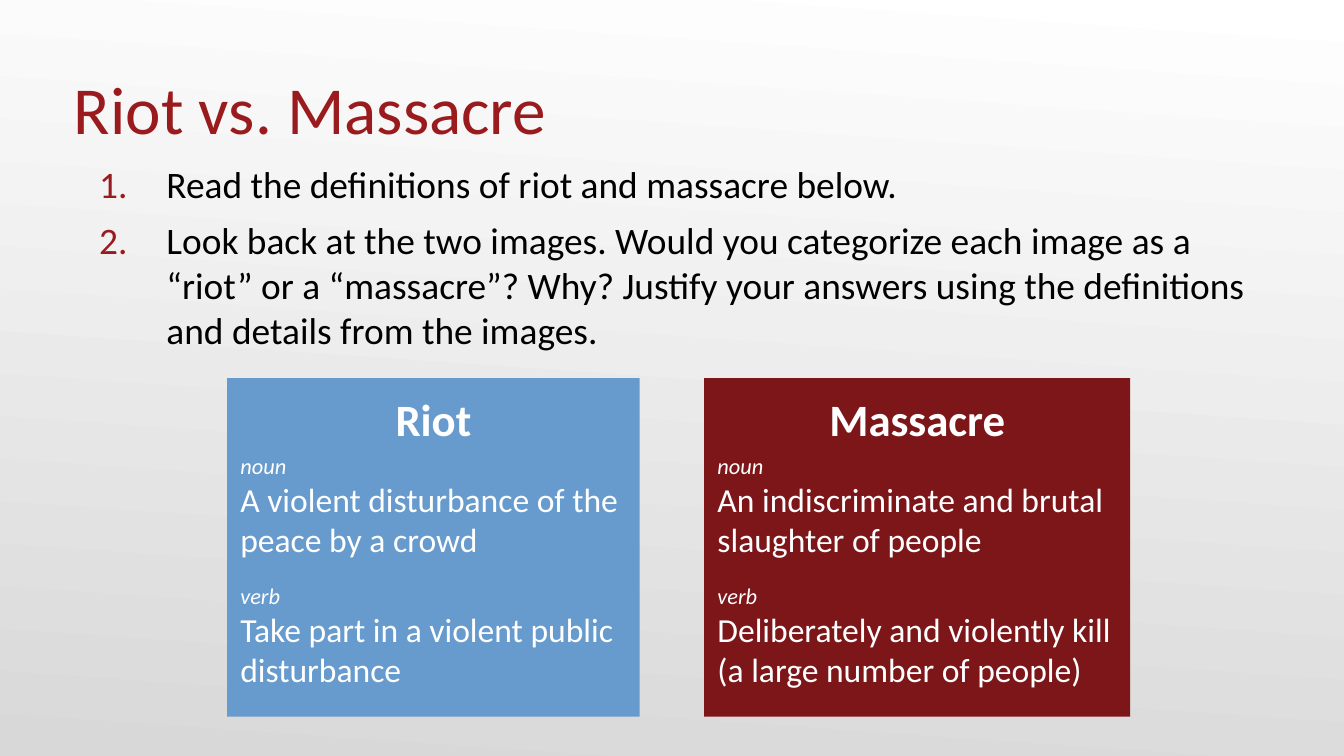
"""Builds the Riot vs. Massacre definitions slide."""
from lxml.etree import SubElement
from pptx import Presentation
from pptx.dml.color import RGBColor
from pptx.enum.shapes import MSO_SHAPE
from pptx.enum.text import MSO_ANCHOR, PP_ALIGN
from pptx.oxml.ns import qn
from pptx.util import Inches, Pt

WIDE = 10
HIGH = WIDE * 9 / 16
RED, BLACK, WHITE = "991B1E", "000000", "FFFFFF"
TITLE = "Riot vs. Massacre"
STEPS = [
    "Read the definitions of riot and massacre below.",
    "Look back at the two images. Would you categorize each image as a “riot” or a "
    "“massacre”? Why? Justify your answers using the definitions and details from the images.",
]
CARDS = [
    ("Riot", "679BCD", 3.07, "A violent disturbance of the peace by a crowd",
     "Take part in a violent public disturbance"),
    ("Massacre", "7D1619", 3.17, "An indiscriminate and brutal slaughter of people",
     "Deliberately and violently kill (a large number of people)"),
]
LEFT, TOP, TALL, GAP = 1.69, HIGH / 2, 2.52, 0.48
HEAD = {"size": Pt(24), "bold": True}
LABEL = {"size": Pt(12), "italic": True}
BODY = {"size": Pt(18)}


def paint(color, code):
    color.rgb = RGBColor.from_string(code)


def setup(frame, insets, anchor=MSO_ANCHOR.TOP):
    sides = ("margin_left", "margin_top", "margin_right", "margin_bottom")
    for side, inset in zip(sides, insets):
        setattr(frame, side, Inches(inset))
    frame.word_wrap = True
    frame.vertical_anchor = anchor


def write(frame, index, text, style, code, **layout):
    para = frame.add_paragraph() if index else frame.paragraphs[0]
    for name, value in {"alignment": PP_ALIGN.LEFT, **layout}.items():
        setattr(para, name, value)
    run = para.add_run()
    run.text = text
    for name, value in {"name": "Calibri", **style}.items():
        setattr(run.font, name, value)
    paint(run.font.color, code)
    return para


def number(para):
    props = para._p.get_or_add_pPr()
    props.set("marL", str(Inches(0.64)))
    props.set("indent", str(Inches(-0.5)))
    SubElement(SubElement(props, qn("a:buClr")), qn("a:srgbClr"), val=RED)
    SubElement(props, qn("a:buFont"), typeface="+mj-lt")
    SubElement(props, qn("a:buAutoNum"), type="arabicPeriod")


def textbox(slide, *place):
    return slide.shapes.add_textbox(*map(Inches, place)).text_frame


def card(slide, left, title, code, width, noun, verb):
    place = map(Inches, (left, TOP, width, TALL))
    box = slide.shapes.add_shape(MSO_SHAPE.RECTANGLE, *place)
    box.shadow.inherit = False
    box.fill.solid()
    paint(box.fill.fore_color, code)
    box.line.fill.background()
    frame = box.text_frame
    setup(frame, [0.1] * 4)
    lines = [
        (title, HEAD, {"alignment": PP_ALIGN.CENTER}),
        ("noun", LABEL, {"space_before": Pt(3.6)}),
        (noun, BODY, {}),
        ("verb", LABEL, {"space_before": Pt(12)}),
        (verb, BODY, {}),
    ]
    for index, (text, style, layout) in enumerate(lines):
        write(frame, index, text, style, WHITE, **layout)


def main():
    deck = Presentation()
    deck.slide_width, deck.slide_height = Inches(WIDE), Inches(HIGH)
    slide = deck.slides.add_slide(deck.slide_layouts[6])
    back = slide.background.fill
    back.gradient()
    back.gradient_angle = 360 - 94
    for stop, code in zip(back.gradient_stops, (WHITE, "D8D8D8")):
        paint(stop.color, code)

    title = textbox(slide, 0.55, 0.54, 9, 0.56)
    setup(title, (0, 0.05, 0, 0), MSO_ANCHOR.BOTTOM)
    write(title, 0, TITLE, {"size": Pt(36)}, RED)

    steps = textbox(slide, 0.5, 1.15, 9, 1.53)
    setup(steps, (0.1, 0.05, 0.1, 0.05))
    for index, text in enumerate(STEPS):
        number(write(steps, index, text, {"size": Pt(20)}, BLACK, space_after=Pt(6)))

    left = LEFT
    for name, code, width, noun, verb in CARDS:
        card(slide, left, name, code, width, noun, verb)
        left += width + GAP
    deck.save("out.pptx")


if __name__ == "__main__":
    main()
